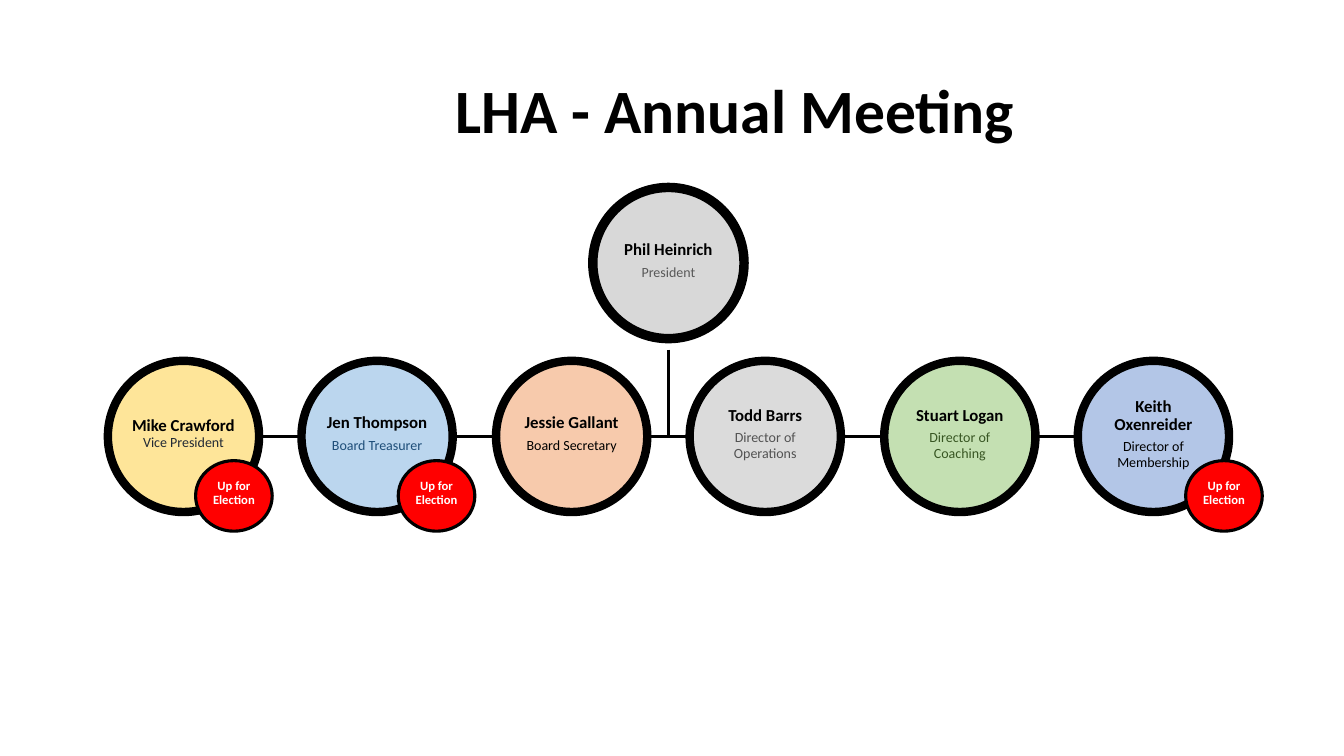
import pptx
import pptx.dml.color
import pptx.enum.shapes
import pptx.enum.text
import pptx.util
from lxml import etree

PX = 9144  # EMU per px, 100 px to the inch
FONT = "Calibri"
BLACK = "000000"

CIRCLE = 150
ROW_TOP = 358
ROW_LEFT, ROW_RIGHT = 107, 1069  # left edges of the first and last circle

# name, role, fill, role colour, left edge of the election badge
BOARD = [
    ("Mike Crawford", "Vice President", "FEE599", "222A35", 194),
    ("Jen Thompson", "Board Treasurer", "BBD6EE", "1E4E79", 395),
    ("Jessie Gallant", "Board Secretary", "F7CAAC", BLACK, None),
    ("Todd Barrs", "Director of Operations", "DBDBDB", "525252", None),
    ("Stuart Logan", "Director of Coaching", "C4E0B2", "385623", None),
    ("Keith Oxenreider", "Director of Membership", "B3C6E7", BLACK, 1176),
]


def px(n):
    return pptx.util.Emu(n * PX)


def rgb(color):
    return pptx.dml.color.RGBColor.from_string(color)


def add_text(p, text, size, color=BLACK, bold=False):
    r = p.add_run()
    r.text = text
    r.font.name = FONT
    r.font.size = pptx.util.Pt(size)
    r.font.bold = bold
    r.font.color.rgb = rgb(color)


def format_paragraph(p, before=0, align=pptx.enum.text.PP_ALIGN.CENTER):
    p.alignment = align
    p.line_spacing = 0.9
    p.space_before = pptx.util.Pt(before)


def add_line(slide, x1, y1, x2, y2):
    line = slide.shapes.add_connector(
        pptx.enum.shapes.MSO_CONNECTOR.STRAIGHT, px(x1), px(y1), px(x2), px(y2))
    line.line.color.rgb = rgb(BLACK)
    line.line.width = pptx.util.Pt(1.5)
    etree.SubElement(line._element.spPr, pptx.oxml.ns.qn("a:effectLst"))


def add_ellipse(slide, x, y, w, h, fill, outline):
    """Draw an outlined ellipse and return its text frame."""
    sp = slide.shapes.add_shape(
        pptx.enum.shapes.MSO_SHAPE.OVAL, px(x), px(y), px(w), px(h))
    sp.shadow.inherit = False
    sp.fill.solid()
    sp.fill.fore_color.rgb = rgb(fill)
    sp.line.color.rgb = rgb(BLACK)
    sp.line.width = pptx.util.Pt(outline)
    tf = sp.text_frame
    tf.word_wrap = True
    tf.vertical_anchor = pptx.enum.text.MSO_ANCHOR.MIDDLE
    tf.margin_left = tf.margin_right = tf.margin_top = px(1)
    tf.margin_bottom = px(6)
    format_paragraph(tf.paragraphs[0])
    return tf


def add_member(slide, x, y, name, role, fill, role_color, outline=6, inline=False):
    """Draw a member's circle; inline keeps the role in the name's paragraph."""
    tf = add_ellipse(slide, x, y, CIRCLE, CIRCLE, fill, outline)
    p = tf.paragraphs[0]
    add_text(p, name + " " if inline else name, 12, bold=True)
    if not inline:
        p = tf.add_paragraph()
        format_paragraph(p, before=4.2)
    add_text(p, role, 10, role_color)


def add_badge(slide, x):
    tf = add_ellipse(slide, x, 457, 76, 70, "FF0000", 2.25)
    add_text(tf.paragraphs[0], "Up for Election", 9, "FFFFFF", bold=True)


def add_title(slide, text):
    sp = slide.shapes.title
    sp.left, sp.top, sp.width, sp.height = px(442), px(40), px(800), px(145)
    tf = sp.text_frame
    tf.word_wrap = True
    tf.vertical_anchor = pptx.enum.text.MSO_ANCHOR.MIDDLE
    tf.margin_left = tf.margin_right = px(10)
    tf.margin_top = tf.margin_bottom = px(5)
    p = tf.paragraphs[0]
    format_paragraph(p, align=pptx.enum.text.PP_ALIGN.LEFT)
    add_text(p, text, 44, bold=True)


def main():
    prs = pptx.Presentation()
    prs.slide_width, prs.slide_height = px(1333), px(750)
    slide = prs.slides.add_slide(prs.slide_layouts[5])
    add_title(slide, "LHA - Annual Meeting")

    row_middle = ROW_TOP + CIRCLE // 2
    add_line(slide, 663, 347, 663, row_middle)
    add_line(slide, ROW_LEFT + CIRCLE, row_middle, ROW_RIGHT, row_middle)

    add_member(slide, 588, 186, "Phil Heinrich", "President", "D8D8D8", "595959",
               outline=6.75)
    pitch = (ROW_RIGHT - ROW_LEFT) / (len(BOARD) - 1)
    for i, (name, role, fill, role_color, _) in enumerate(BOARD):
        add_member(slide, round(ROW_LEFT + i * pitch), ROW_TOP, name, role, fill,
                   role_color, inline=(i == 0))
    for *_, badge_left in BOARD:
        if badge_left is not None:
            add_badge(slide, badge_left)

    prs.save("out.pptx")


if __name__ == "__main__":
    main()
